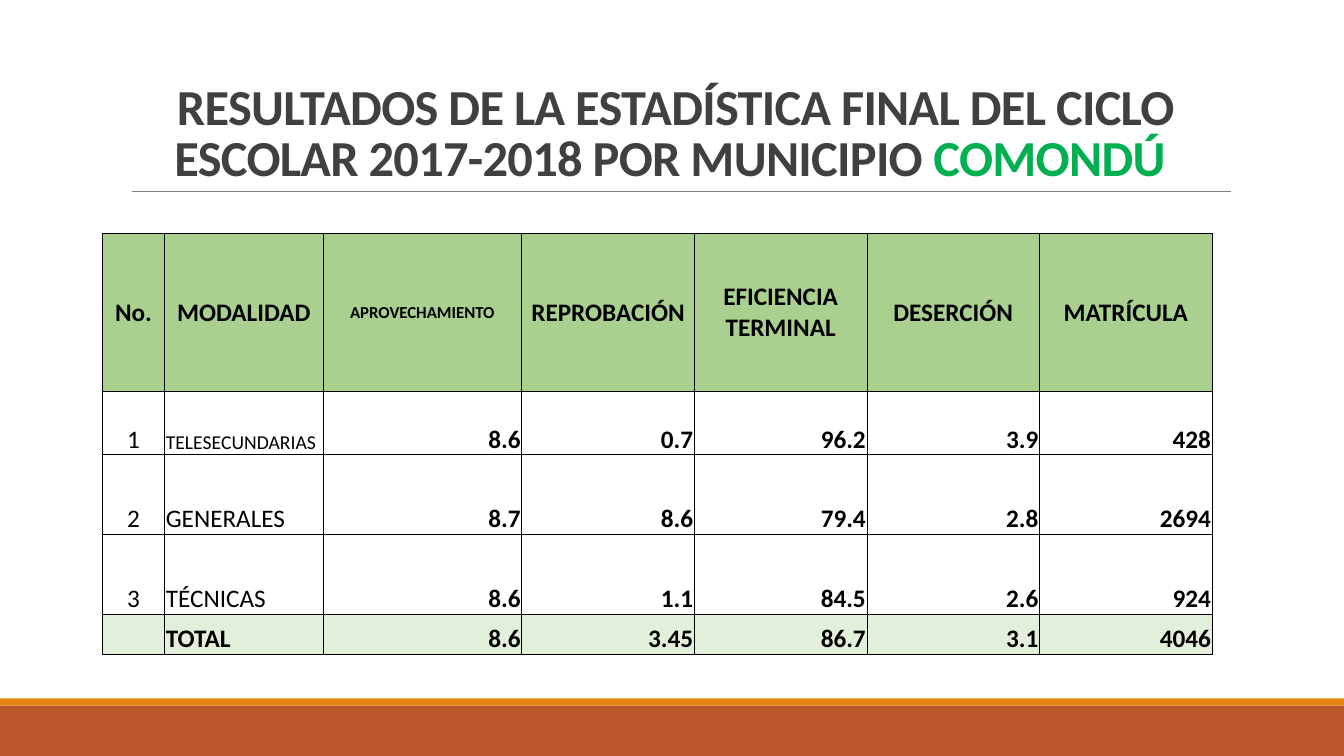
from dataclasses import dataclass

from lxml import etree
from pptx import Presentation
from pptx.dml.color import RGBColor
from pptx.enum.shapes import MSO_CONNECTOR, MSO_SHAPE
from pptx.enum.text import MSO_ANCHOR, PP_ALIGN
from pptx.oxml.ns import qn
from pptx.util import Cm, Pt

RECT = MSO_SHAPE.RECTANGLE
STRAIGHT = MSO_CONNECTOR.STRAIGHT
LEFT, CENTER, RIGHT = PP_ALIGN.LEFT, PP_ALIGN.CENTER, PP_ALIGN.RIGHT
MIDDLE, BOTTOM = MSO_ANCHOR.MIDDLE, MSO_ANCHOR.BOTTOM

BLACK = RGBColor(0x00, 0x00, 0x00)
DARK_GRAY = RGBColor(0x40, 0x40, 0x40)
GRAY = RGBColor(0x80, 0x80, 0x80)
GREEN = RGBColor(0x00, 0xB0, 0x50)
HEADER_GREEN = RGBColor(0xA9, 0xD0, 0x8E)
TOTAL_GREEN = RGBColor(0xE2, 0xEF, 0xDA)
ORANGE = RGBColor(0xE4, 0x83, 0x12)
RUST = RGBColor(0xBD, 0x58, 0x2C)

FONT = "Calibri"
SLIDE_W, SLIDE_H = 33.87, 19.05


@dataclass(frozen=True)
class Band:
    top: float
    height: float
    color: RGBColor


@dataclass(frozen=True)
class Column:
    heading: str
    width: float
    align: PP_ALIGN = RIGHT
    heading_size: float = 18


@dataclass(frozen=True)
class Row:
    height: float
    values: tuple[str, ...]
    fill: RGBColor | None = None
    label_size: float = 18
    label_bold: bool = False


BANDS = [Band(17.78, 1.27, RUST), Band(17.6, 0.18, ORANGE)]

COLUMNS = [
    Column("No.", 1.57, CENTER),
    Column("MODALIDAD", 3.99, LEFT),
    Column("APROVECHAMIENTO", 5.01, heading_size=12),
    Column("REPROBACIÓN", 4.35),
    Column("EFICIENCIA TERMINAL", 4.35),
    Column("DESERCIÓN", 4.35),
    Column("MATRÍCULA", 4.35),
]
HEADER_HEIGHT = 3.97
ROWS = [
    Row(1.61, ("1", "TELESECUNDARIAS", "8.6", "0.7", "96.2", "3.9", "428"), label_size=14),
    Row(2.01, ("2", "GENERALES", "8.7", "8.6", "79.4", "2.8", "2694")),
    Row(2.01, ("3", "TÉCNICAS", "8.6", "1.1", "84.5", "2.6", "924")),
    Row(1.01, ("", "TOTAL", "8.6", "3.45", "86.7", "3.1", "4046"), TOTAL_GREEN, label_bold=True),
]


def add_text(p, text: str, *, size: float = 18, color: RGBColor = BLACK,
             bold: bool = True, align: PP_ALIGN = CENTER, spacing: float = 0) -> None:
    p.alignment = align
    r = p.add_run()
    r.text = text
    r.font.name = FONT
    r.font.size = Pt(size)
    r.font.bold = bold
    r.font.color.rgb = color
    if spacing:
        r._r.get_or_add_rPr().set("spc", str(round(spacing * 100)))


def add_band(slide, band: Band) -> None:
    sp = slide.shapes.add_shape(RECT, 0, Cm(band.top), Cm(SLIDE_W), Cm(band.height))
    sp.shadow.inherit = False
    sp.fill.solid()
    sp.fill.fore_color.rgb = band.color
    sp.line.fill.background()


def add_rule(slide) -> None:
    line = slide.shapes.add_connector(STRAIGHT, Cm(3.33), Cm(4.83), Cm(31.01), Cm(4.83))
    line.line.color.rgb = GRAY
    line.line.width = Pt(0.5)
    etree.SubElement(line._element.spPr, qn("a:effectLst"))


def add_title(slide) -> None:
    tf = slide.shapes.add_textbox(Cm(3.05), Cm(0.79), Cm(27.94), Cm(4.04)).text_frame
    tf.word_wrap = True
    tf.vertical_anchor = BOTTOM
    p = tf.paragraphs[0]
    p.line_spacing = 0.85
    add_text(p, "RESULTADOS DE LA ESTADÍSTICA FINAL DEL CICLO ESCOLAR 2017-2018 POR MUNICIPIO ",
             size=36, color=DARK_GRAY, spacing=-0.5)
    add_text(p, "COMONDÚ ", size=36, color=GREEN, spacing=-0.5)


def format_cell(cell, fill: RGBColor | None, anchor: MSO_ANCHOR) -> None:
    cell.margin_left = cell.margin_right = cell.margin_top = Cm(0.03)
    cell.margin_bottom = 0
    cell.vertical_anchor = anchor
    tcPr = cell._tc.get_or_add_tcPr()
    for side in ("lnL", "lnR", "lnT", "lnB"):
        ln = etree.SubElement(tcPr, qn(f"a:{side}"), w=str(Pt(0.5)))
        solid = etree.SubElement(ln, qn("a:solidFill"))
        etree.SubElement(solid, qn("a:srgbClr"), val=str(BLACK))
    if fill is None:
        cell.fill.background()
    else:
        cell.fill.solid()
        cell.fill.fore_color.rgb = fill


def add_results(slide) -> None:
    heights = [HEADER_HEIGHT] + [row.height for row in ROWS]
    width = sum(col.width for col in COLUMNS)
    table = slide.shapes.add_table(len(heights), len(COLUMNS), Cm(2.58), Cm(5.88),
                                   Cm(width), Cm(sum(heights))).table
    table.first_row = False
    table.horz_banding = False
    for i, height in enumerate(heights):
        table.rows[i].height = Cm(height)
    for j, col in enumerate(COLUMNS):
        table.columns[j].width = Cm(col.width)
        cell = table.cell(0, j)
        format_cell(cell, HEADER_GREEN, MIDDLE)
        add_text(cell.text_frame.paragraphs[0], col.heading, size=col.heading_size)
        for i, row in enumerate(ROWS, start=1):
            cell = table.cell(i, j)
            format_cell(cell, row.fill, BOTTOM)
            if row.values[j]:
                add_text(cell.text_frame.paragraphs[0], row.values[j],
                         size=row.label_size if j == 1 else 18,
                         bold=j > 1 or row.label_bold, align=col.align)


def main() -> None:
    prs = Presentation()
    prs.slide_width, prs.slide_height = Cm(SLIDE_W), Cm(SLIDE_H)
    slide = prs.slides.add_slide(prs.slide_layouts[6])
    for band in BANDS:
        add_band(slide, band)
    add_rule(slide)
    add_title(slide)
    add_results(slide)
    prs.save("out.pptx")


if __name__ == "__main__":
    main()
